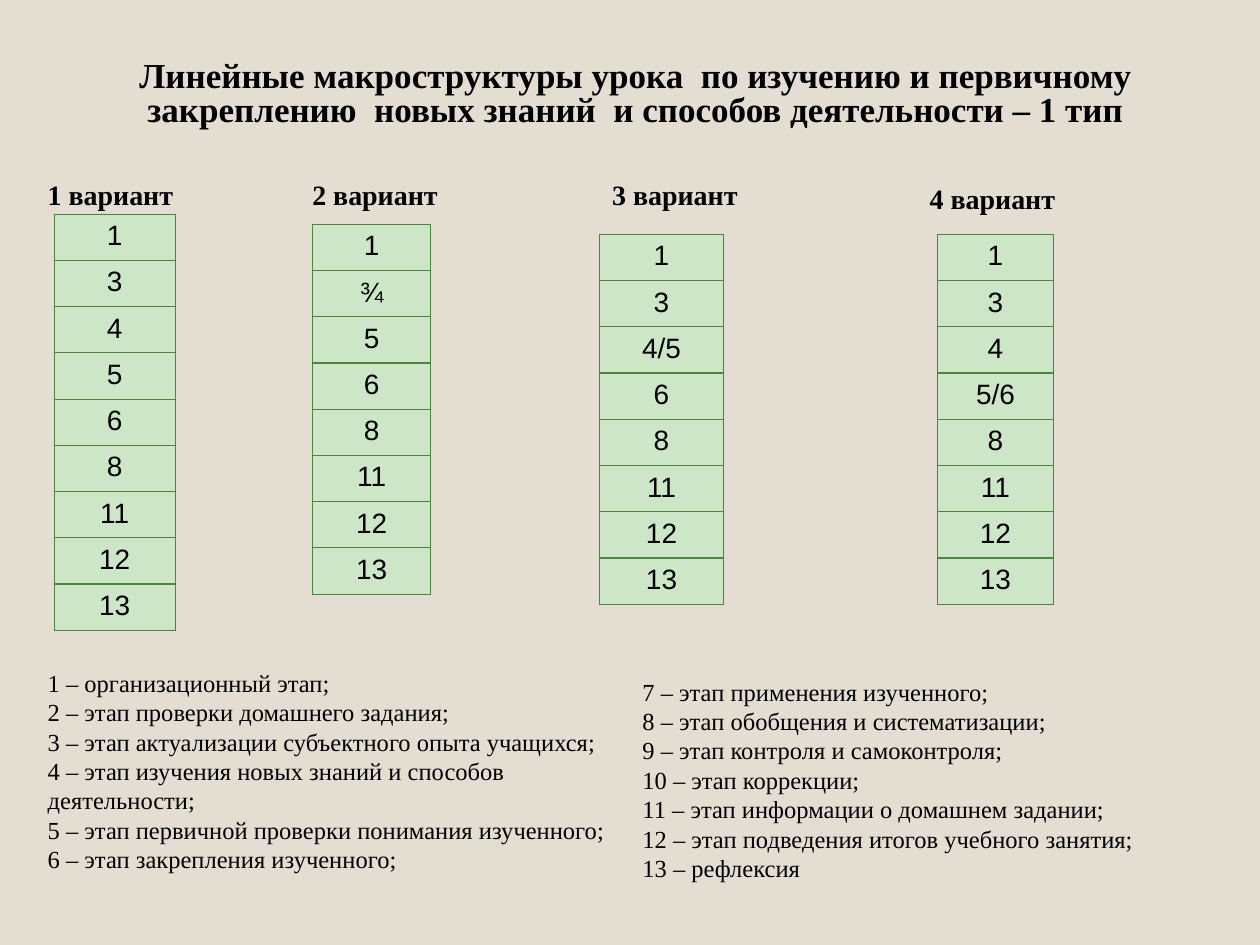
from lxml.etree import SubElement
from pptx import Presentation
from pptx.dml.color import RGBColor
from pptx.enum.text import PP_ALIGN
from pptx.oxml.ns import qn
from pptx.util import Inches, Pt

# Content
TITLE = ("Линейные макроструктуры урока  по изучению и первичному "
         "закреплению  новых знаний  и способов деятельности – 1 тип")
# heading, heading (left, top), table (left, top, width), stages
VARIANTS = [
    ("1 вариант", (0.28, 1.36), (0.43, 1.70, 0.96),
     ["1", "3", "4", "5", "6", "8", "11", "12", "13"]),
    ("2 вариант", (2.38, 1.36), (2.48, 1.78, 0.94),
     ["1", "¾", "5", "6", "8", "11", "12", "13"]),
    ("3 вариант", (4.76, 1.36), (4.76, 1.86, 0.98),
     ["1", "3", "4/5", "6", "8", "11", "12", "13"]),
    ("4 вариант", (7.28, 1.39), (7.44, 1.86, 0.92),
     ["1", "3", "4", "5/6", "8", "11", "12", "13"]),
]
# left, top, width, lines
LEGENDS = [
    (0.28, 5.25, 4.72, [
        "1 – организационный этап;",
        "2 – этап проверки домашнего задания;",
        "3 – этап актуализации субъектного опыта учащихся;",
        "4 – этап изучения новых знаний и способов деятельности;",
        "5 – этап первичной проверки понимания изученного;",
        "6 – этап закрепления изученного;"]),
    (5.00, 5.32, 4.65, [
        "7 – этап применения изученного;",
        "8 – этап обобщения и систематизации;",
        "9 – этап контроля и самоконтроля;",
        "10 – этап коррекции;",
        "11 – этап информации о домашнем задании;",
        "12 – этап подведения итогов учебного занятия;",
        "13 – рефлексия"]),
]
COLORS = {"bg": "E3DED1", "text": "000000", "cell": "CDE6C8", "border": "4B843F"}
SERIF, SANS = "Times New Roman", "Arial"
ROW_H = 3.3 / 9


def rgb(name):
    return RGBColor.from_string(COLORS[name])


def add_run(p, text, size, font=SERIF, bold=False):
    r = p.add_run()
    r.text = text
    r.font.size, r.font.name, r.font.bold = Pt(size), font, bold
    r.font.color.rgb = rgb("text")


def add_text(s, box, lines, size, bold=False, align=PP_ALIGN.LEFT, spacing=None):
    tf = s.shapes.add_textbox(*map(Inches, box)).text_frame
    tf.word_wrap = True
    for i, line in enumerate(lines):
        p = tf.add_paragraph() if i else tf.paragraphs[0]
        p.alignment, p.line_spacing = align, spacing
        add_run(p, line, size, bold=bold)


def add_borders(cell):
    tc_pr = cell._tc.get_or_add_tcPr()
    for i, side in enumerate(("lnL", "lnR", "lnT", "lnB")):
        ln = SubElement(tc_pr, qn(f"a:{side}"), w=str(Pt(0.75)))
        fill = SubElement(ln, qn("a:solidFill"))
        SubElement(fill, qn("a:srgbClr"), val=COLORS["border"])
        tc_pr.insert(i, ln)  # borders come before the fill


def add_stages(s, left, top, width, stages):
    box = map(Inches, (left, top, width, ROW_H * len(stages)))
    table = s.shapes.add_table(len(stages), 1, *box).table
    table.first_row = table.horz_banding = False
    for i, stage in enumerate(stages):
        cell = table.cell(i, 0)
        cell.fill.solid()
        cell.fill.fore_color.rgb = rgb("cell")
        add_borders(cell)
        p = cell.text_frame.paragraphs[0]
        p.alignment = PP_ALIGN.CENTER
        add_run(p, stage, 16, SANS)


prs = Presentation()
prs.slide_width, prs.slide_height = Inches(10), Inches(7.5)
s = prs.slides.add_slide(prs.slide_layouts[6])
s.background.fill.solid()
s.background.fill.fore_color.rgb = rgb("bg")

# Title
add_text(s, (0.28, 0.44, 9.53, 0.65), [TITLE], 20, True, PP_ALIGN.CENTER, 0.8)

# Variants: heading above a column of stages
for heading, (left, top), place, stages in VARIANTS:
    add_text(s, (left, top, 1.21, 0.37), [heading], 16, True)
    add_stages(s, *place, stages)

# Legend of stages
for left, top, width, lines in LEGENDS:
    add_text(s, (left, top, width, 1.75), lines, 14)

prs.save("out.pptx")
